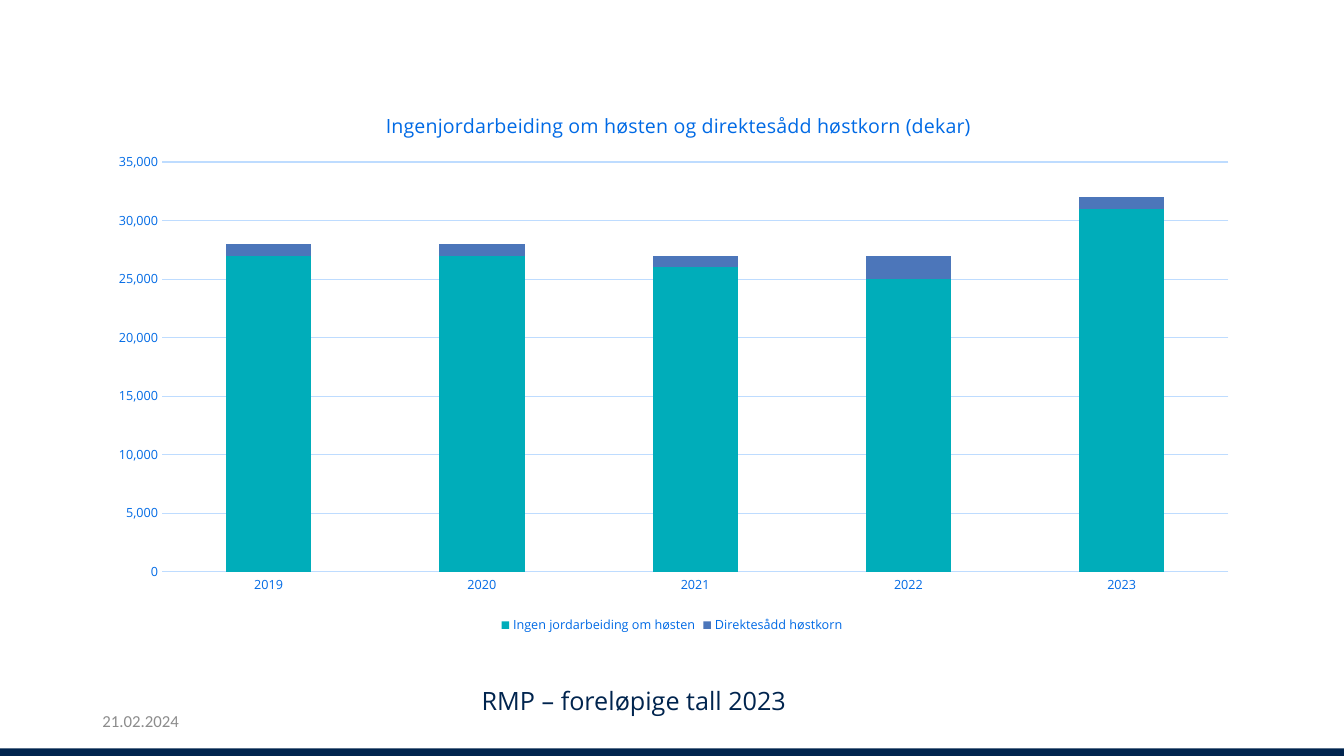
from lxml import etree
from pptx import Presentation
from pptx.chart.data import CategoryChartData
from pptx.dml.color import RGBColor
from pptx.enum.chart import XL_CHART_TYPE as ChartType, XL_LEGEND_POSITION as LegendPosition
from pptx.enum.chart import XL_TICK_MARK as TickMark
from pptx.enum.shapes import MSO_SHAPE as Shape
from pptx.enum.text import MSO_ANCHOR as Anchor, MSO_AUTO_SIZE as AutoSize
from pptx.oxml.ns import qn
from pptx.util import Cm, Pt

COLORS = {
    "navy": "00244E",
    "grey": "8C8C8C",
    "blue": "006AE5",
    "pale": "BEDCFF",
    "teal": "00ADBA",
    "indigo": "4C76BA",
}
YEARS = ["2019", "2020", "2021", "2022", "2023"]
SERIES = [
    ("Ingen jordarbeiding om høsten", [27000, 27000, 26000, 25000, 31000], "teal"),
    ("Direktesådd høstkorn", [1000, 1000, 1000, 2000, 1000], "indigo"),
]
CHART_TITLE = "Ingenjordarbeiding om høsten og direktesådd høstkorn (dekar)"


def color(name):
    return RGBColor.from_string(COLORS[name])


def style_font(font, size, name, face="Open Sans"):
    font.size = Pt(size)
    font.name = face
    font.bold = False
    font.color.rgb = color(name)


def style_line(line):
    line.color.rgb = color("pale")
    line.width = Pt(0.75)


def set_layout(element, index, **fractions):
    for previous in element.findall(qn("c:layout")):
        element.remove(previous)
    layout = etree.Element(qn("c:layout"))
    manual = etree.SubElement(layout, qn("c:manualLayout"))
    if "w" in fractions:
        etree.SubElement(manual, qn("c:layoutTarget")).set("val", "inner")
    for side in ("x", "y"):
        etree.SubElement(manual, qn(f"c:{side}Mode")).set("val", "edge")
    for key, value in fractions.items():
        etree.SubElement(manual, qn(f"c:{key}")).set("val", str(value))
    element.insert(index, layout)


def add_label(slide, box, text, size, name, face="Open Sans", wrap=True):
    frame = slide.shapes.add_textbox(*box).text_frame
    frame.word_wrap = wrap
    frame.auto_size = AutoSize.NONE if wrap else AutoSize.SHAPE_TO_FIT_TEXT
    frame.vertical_anchor = Anchor.MIDDLE
    frame.text = text
    style_font(frame.paragraphs[0].font, size, name, face)


def add_footer(slide, left, top, width, height):
    band_height = Cm(0.19)
    band = slide.shapes.add_shape(
        Shape.RECTANGLE, left, top + height - band_height, width, band_height)
    band.shadow.inherit = False
    band.fill.solid()
    band.fill.fore_color.rgb = color("navy")
    band.line.fill.background()
    add_label(slide, (left + Cm(2.33), top + Cm(0.51), Cm(7.62), Cm(1.01)),
              "21.02.2024", 12, "grey", "Calibri")
    add_label(slide, (left + Cm(11.89), top, Cm(8.25), Cm(1.02)),
              "RMP – foreløpige tall 2023", 18, "navy", wrap=False)


def add_tillage_chart(slide, left, top, width, height):
    data = CategoryChartData(number_format="#,##0")
    data.categories = YEARS
    for label, values, _ in SERIES:
        data.add_series(label, values)
    chart = slide.shapes.add_chart(
        ChartType.COLUMN_STACKED, left, top, width, height, data).chart
    style_font(chart.font, 10, "navy")

    chart.has_title = True
    heading = chart.chart_title
    heading.include_in_layout = False
    heading.text_frame.text = CHART_TITLE
    style_font(heading.text_frame.paragraphs[0].font, 14, "blue")
    set_layout(heading._element, 1, x=0.25, y=0.04)

    columns = chart.plots[0]
    columns.gap_width = 150
    columns.overlap = 100
    columns.vary_by_categories = False
    for series, (_, _, fill) in zip(columns.series, SERIES):
        series.format.fill.solid()
        series.format.fill.fore_color.rgb = color(fill)

    years, decares = chart.category_axis, chart.value_axis
    for axis in (years, decares):
        axis.major_tick_mark = TickMark.NONE
        axis.minor_tick_mark = TickMark.NONE
        style_font(axis.tick_labels.font, 9, "blue")
    style_line(years.format.line)
    decares.format.line.fill.background()
    decares.minimum_scale, decares.maximum_scale, decares.major_unit = 0, 35000, 5000
    decares.tick_labels.number_format = "#,##0"
    decares.tick_labels.number_format_is_linked = False
    decares.has_major_gridlines = True
    style_line(decares.major_gridlines.format.line)

    chart.has_legend = True
    chart.legend.position = LegendPosition.BOTTOM
    chart.legend.include_in_layout = False
    style_font(chart.legend.font, 9, "blue")
    plot_area = chart._chartSpace.find(f".//{qn('c:plotArea')}")
    set_layout(plot_area, 0, x=0.06, y=0.14, w=0.92, h=0.74)


def main():
    deck = Presentation()
    deck.slide_width, deck.slide_height = Cm(33.87), Cm(19.05)
    slide = deck.slides.add_slide(deck.slide_layouts[6])
    footer_top = Cm(17.15)
    add_footer(slide, 0, footer_top, deck.slide_width, deck.slide_height - footer_top)
    add_tillage_chart(slide, Cm(2.33), Cm(2.13), Cm(29.21), Cm(13.95))
    deck.save("out.pptx")


if __name__ == "__main__":
    main()
